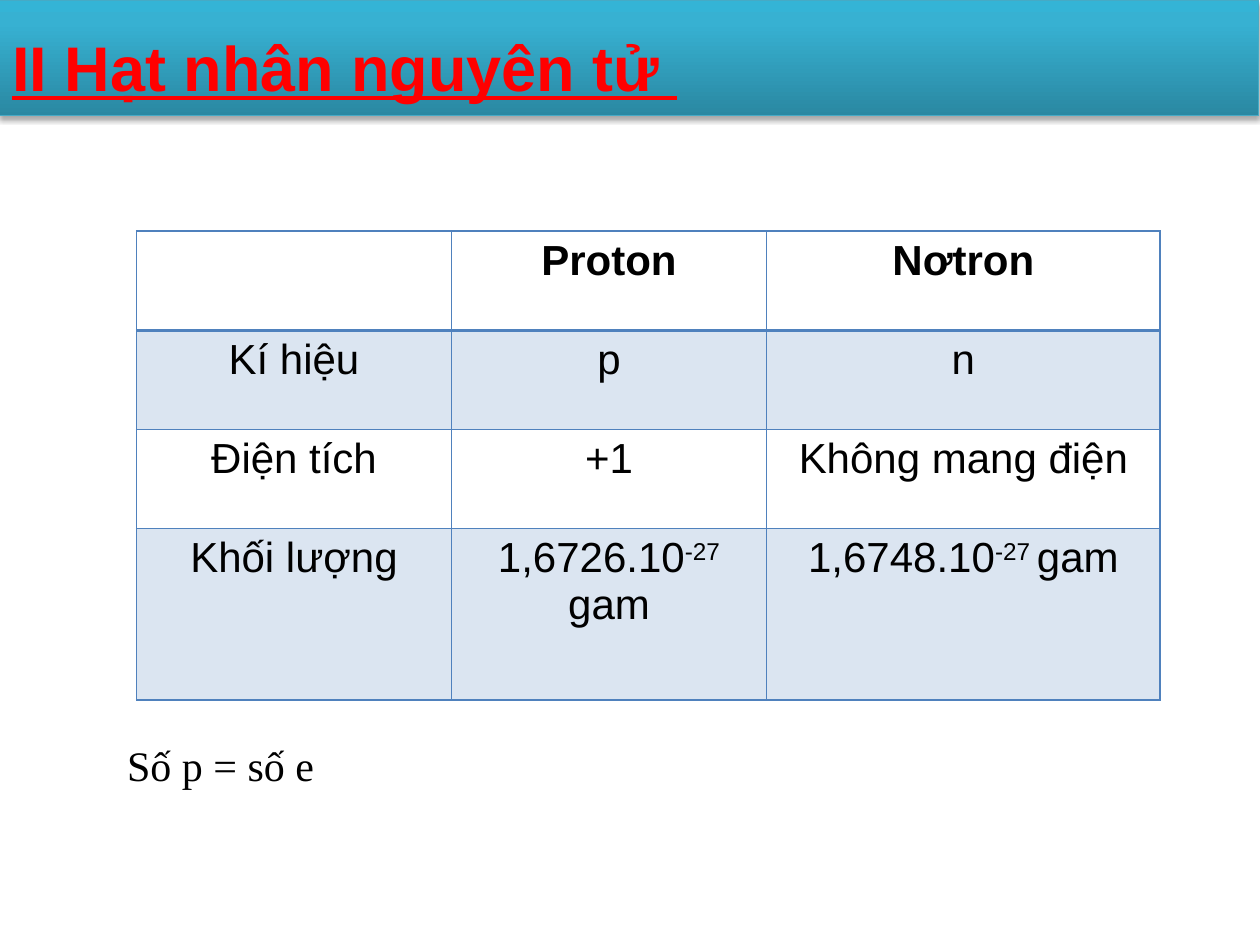
from dataclasses import dataclass, field

from lxml.etree import SubElement
from pptx import Presentation
from pptx.dml.color import RGBColor as Rgb
from pptx.enum.shapes import MSO_SHAPE as Shape
from pptx.enum.text import MSO_AUTO_SIZE as AutoSize, PP_ALIGN as Align
from pptx.oxml.ns import qn
from pptx.util import Pt

COLORS = {
    "title": "FF0000", "text": "000000", "grid": "4F81BD", "edge": "46AAC5",
    "deep": "2A88A2", "mid": "37B1D2", "light": "34B4D6", "shadow": "000000",
}
HEADINGS = ["", "Proton", "Nơtron"]
PROPERTIES = [
    ["Kí hiệu", "p", "n"],
    ["Điện tích", "+1", "Không mang điện"],
    ["Khối lượng", ("1,6726.10", "-27 ", "gam"), ("1,6748.10", "-27 ", "gam")],
]


def add_node(parent, tag, **attributes):
    """Append a DrawingML element with the given attributes."""
    return SubElement(parent, qn(tag), {key: str(value) for key, value in attributes.items()})


def add_color(parent, name, alpha=None):
    """Append a palette colour, optionally with a percentage of opacity."""
    color = add_node(parent, "a:srgbClr", val=COLORS[name])
    if alpha is not None:
        add_node(color, "a:alpha", val=alpha * 1000)


@dataclass
class SlideBuilder:
    """Hold the style and the current slide."""

    page: object
    font: str = "Arial"
    size: float = 24
    colors: dict = field(default_factory=lambda: COLORS)

    def span(self, para, text, color="text", font=None, size=None, bold=False,
             underline=False, raised=False):
        """Add one styled run to a paragraph."""
        span = para.add_run()
        span.text = text
        span.font.name = font or self.font
        span.font.size = Pt(size or self.size)
        span.font.bold = bold
        span.font.underline = underline
        span.font.color.rgb = Rgb.from_string(self.colors[color])
        if raised:
            span._r.get_or_add_rPr().set("baseline", "30000")

    def banner(self, parent, left, top, width, height, stops):
        """Add a shaded rectangle with a soft shadow beneath it."""
        box = parent.add_shape(Shape.RECTANGLE, Pt(left), Pt(top), Pt(width), Pt(height))
        box.fill.gradient()
        box.fill.gradient_angle = 90
        stop_list = box._element.spPr.find(qn("a:gradFill")).find(qn("a:gsLst"))
        stop_list.clear()
        for position, color in stops:
            add_color(add_node(stop_list, "a:gs", pos=position * 1000), color)
        box.line.color.rgb = Rgb.from_string(self.colors["edge"])
        box.line.width = Pt(0.75)
        box.shadow.inherit = False
        effects = box._element.spPr.find(qn("a:effectLst"))
        shadow = add_node(effects, "a:outerShdw", blurRad=Pt(3.1), dist=Pt(1.8),
                          dir=5400000, rotWithShape=0)
        add_color(shadow, "shadow", 35)

    def label(self, parent, text, left, top, width, height, wrap=True, **style):
        """Add a text box with a single run."""
        box = parent.add_textbox(Pt(left), Pt(top), Pt(width), Pt(height))
        box.text_frame.word_wrap = wrap
        box.text_frame.auto_size = AutoSize.SHAPE_TO_FIT_TEXT
        self.span(box.text_frame.paragraphs[0], text, **style)

    def cell(self, cell, content, row):
        """Fill in one table cell with its text, borders and shading."""
        para = cell.text_frame.paragraphs[0]
        para.alignment = Align.CENTER
        parts = (content,) if isinstance(content, str) else content
        for index, part in enumerate(parts):
            if part:
                self.span(para, part, bold=row == 0, raised=index == 1)
        properties = cell._tc.get_or_add_tcPr()
        widths = {"L": 1, "R": 1, "T": 2 if row == 1 else 1, "B": 2 if row == 0 else 1}
        for side, width in widths.items():
            border = add_node(properties, f"a:ln{side}", w=Pt(width))
            add_color(add_node(border, "a:solidFill"), "grid")
        if row % 2:
            add_color(add_node(properties, "a:solidFill"), "grid", 20)
        else:
            cell.fill.background()

    def table(self, rows, left, top, widths, heights):
        """Add a bordered table whose odd rows are shaded."""
        frame = self.page.shapes.add_table(len(rows), len(widths), Pt(left), Pt(top),
                                           Pt(sum(widths)), Pt(sum(heights)))
        table = frame.table
        table.first_row = table.horz_banding = False
        for column, width in zip(table.columns, widths):
            column.width = Pt(width)
        for row, (contents, height) in enumerate(zip(rows, heights)):
            table.rows[row].height = Pt(height)
            for column, content in enumerate(contents):
                self.cell(table.cell(row, column), content, row)


def main():
    """Build the slide about the atomic nucleus."""
    deck = Presentation()
    deck.slide_width, deck.slide_height = Pt(720), Pt(540)
    page = deck.slides.add_slide(deck.slide_layouts[6])
    builder = SlideBuilder(page)

    header = page.shapes.add_group_shape().shapes
    builder.banner(header, -1, 0, 720, 66, [(0, "deep"), (80, "mid"), (100, "light")])
    builder.label(header, "II Hạt nhân nguyên tử ", 0, 12.5, 398, 51, wrap=False,
                  color="title", size=36, bold=True, underline=True)
    builder.table([HEADINGS, *PROPERTIES], 78, 132, [180, 180, 225],
                  [56.7, 56.7, 56.7, 98])
    builder.label(page.shapes, "Số p = số e", 65.5, 419, 588, 36, font="Times New Roman")
    deck.save("out.pptx")


if __name__ == "__main__":
    main()
